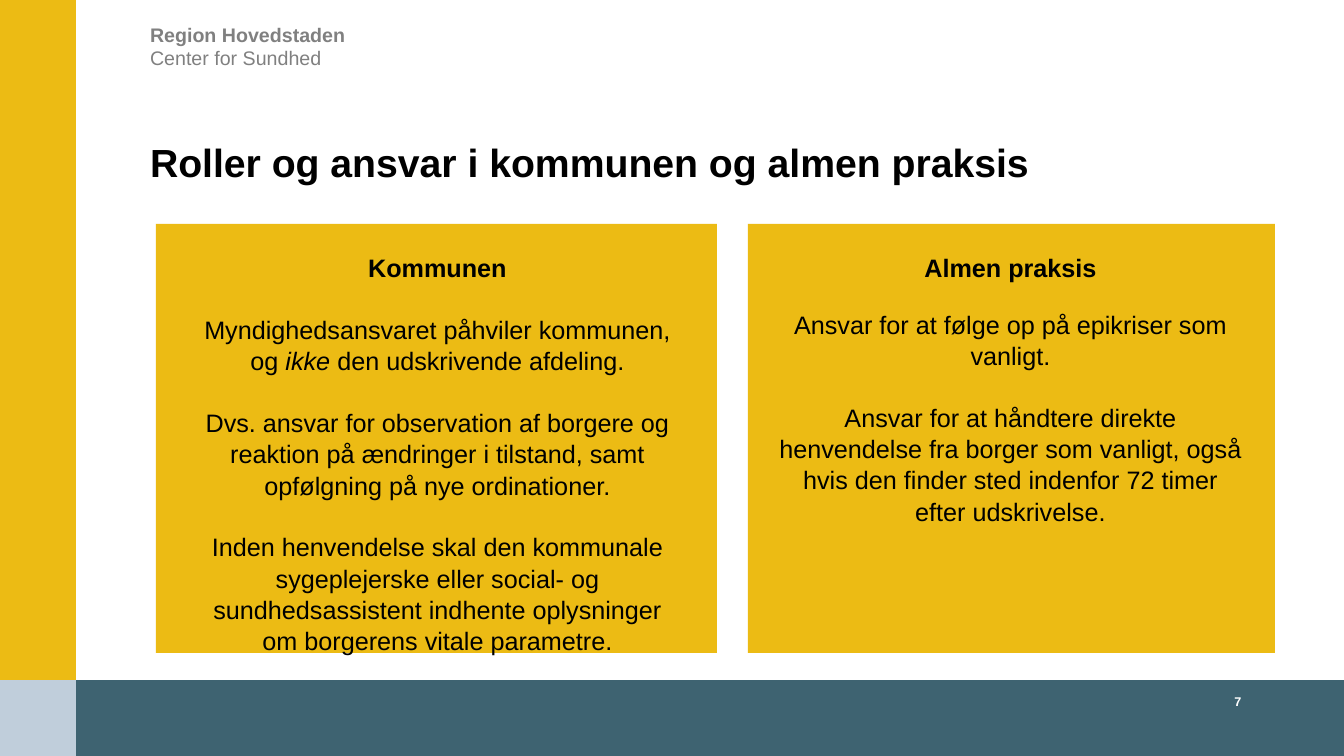
from dataclasses import dataclass

import pptx
import pptx.dml.color
import pptx.enum.shapes
import pptx.enum.text
import pptx.util

PX = 9144000 / 1008
ALIGN = pptx.enum.text.PP_ALIGN
ANCHOR = pptx.enum.text.MSO_ANCHOR


@dataclass(frozen=True)
class Theme:
    font: str = "Arial"
    yellow: str = "ECBB14"
    teal: str = "3E6371"
    pale: str = "C0CEDB"
    black: str = "000000"
    grey: str = "808080"
    white: str = "FFFFFF"
    title: int = 28
    body: int = 18
    header: int = 14
    number: int = 9


def px(n):
    return pptx.util.Emu(round(n * PX))


def rgb(color):
    return pptx.dml.color.RGBColor.from_string(color)


class Deck:
    def __init__(self, theme):
        self.theme = theme
        self.prs = pptx.Presentation()
        self.prs.slide_width, self.prs.slide_height = px(1344), px(756)
        self.s = self.prs.slides.add_slide(self.prs.slide_layouts[6])

    def rect(self, x, y, w, h, color):
        sp = self.s.shapes.add_shape(
            pptx.enum.shapes.MSO_SHAPE.RECTANGLE, px(x), px(y), px(w), px(h))
        sp.shadow.inherit = False
        sp.fill.solid()
        sp.fill.fore_color.rgb = rgb(color)
        sp.line.fill.background()

    def frame(self, x, y, w, h, anchor=ANCHOR.TOP):
        """Add a text box without margins and return its text frame."""
        tf = self.s.shapes.add_textbox(px(x), px(y), px(w), px(h)).text_frame
        tf.word_wrap = True
        tf.margin_left = tf.margin_top = tf.margin_right = tf.margin_bottom = 0
        tf.vertical_anchor = anchor
        return tf

    def style(self, p, size, color, bold=False, align=ALIGN.LEFT, spacing=1.0):
        p.font.name = self.theme.font
        p.font.size = pptx.util.Pt(size)
        p.font.bold = bold
        p.font.color.rgb = rgb(color)
        p.alignment = align
        p.line_spacing = spacing

    def text(self, x, y, w, h, text, size, color, anchor=ANCHOR.TOP, **style):
        p = self.frame(x, y, w, h, anchor).paragraphs[0]
        p.text = text
        self.style(p, size, color, **style)

    def column(self, x, y, w, h, heading, heading_gap, paragraphs):
        """Write a bold heading and paragraphs of (text, italic) runs."""
        tf = self.frame(x, y, w, h)
        for i, runs in enumerate([[(heading, False)], *paragraphs]):
            p = tf.add_paragraph() if i else tf.paragraphs[0]
            for text, italic in runs:
                r = p.add_run()
                r.text = text
                if italic:
                    r.font.italic = True
            self.style(p, self.theme.body, self.theme.black, bold=i == 0,
                       align=ALIGN.CENTER, spacing=1.04)
            if i:
                p.space_before = pptx.util.Pt(heading_gap if i == 1 else 21.6)


def main():
    theme = Theme()
    deck = Deck(theme)
    deck.text(150, 23, 568, 24, "Region Hovedstaden", theme.header, theme.grey, bold=True)
    deck.text(150, 46, 568, 46, "Center for Sundhed", theme.header, theme.grey)

    deck.rect(68, 680, 1276, 76, theme.teal)
    deck.rect(0, 0, 76, 680, theme.yellow)
    deck.rect(0, 680, 76, 76, theme.pale)

    deck.text(150, 140, 902, 46, "Roller og ansvar i kommunen og almen praksis",
              theme.title, theme.black, anchor=ANCHOR.BOTTOM, bold=True, spacing=0.85)
    deck.text(1200, 694, 76, 20, "7", theme.number, theme.white,
              bold=True, align=ALIGN.CENTER)

    deck.rect(156, 224, 561, 429, theme.yellow)
    deck.column(203, 251, 469, 318, "Kommunen", 21.6, [
        [("Myndighedsansvaret påhviler kommunen, og ", False), ("ikke ", True),
         ("den udskrivende afdeling.", False)],
        [("Dvs. ansvar for observation af borgere og reaktion på ændringer i "
          "tilstand, samt opfølgning på nye ordinationer.", False)],
        [("Inden henvendelse skal den kommunale sygeplejerske eller social- og "
          "sundhedsassistent indhente oplysninger om borgerens vitale parametre.", False)],
    ])

    deck.rect(748, 224, 527, 429, theme.yellow)
    deck.column(776, 251, 469, 318, "Almen praksis", 18, [
        [("Ansvar for at følge op på epikriser som vanligt.", False)],
        [("Ansvar for at håndtere direkte henvendelse fra borger som vanligt, også "
          "hvis den finder sted indenfor 72 timer efter udskrivelse.", False)],
    ])
    deck.prs.save("out.pptx")


if __name__ == "__main__":
    main()
